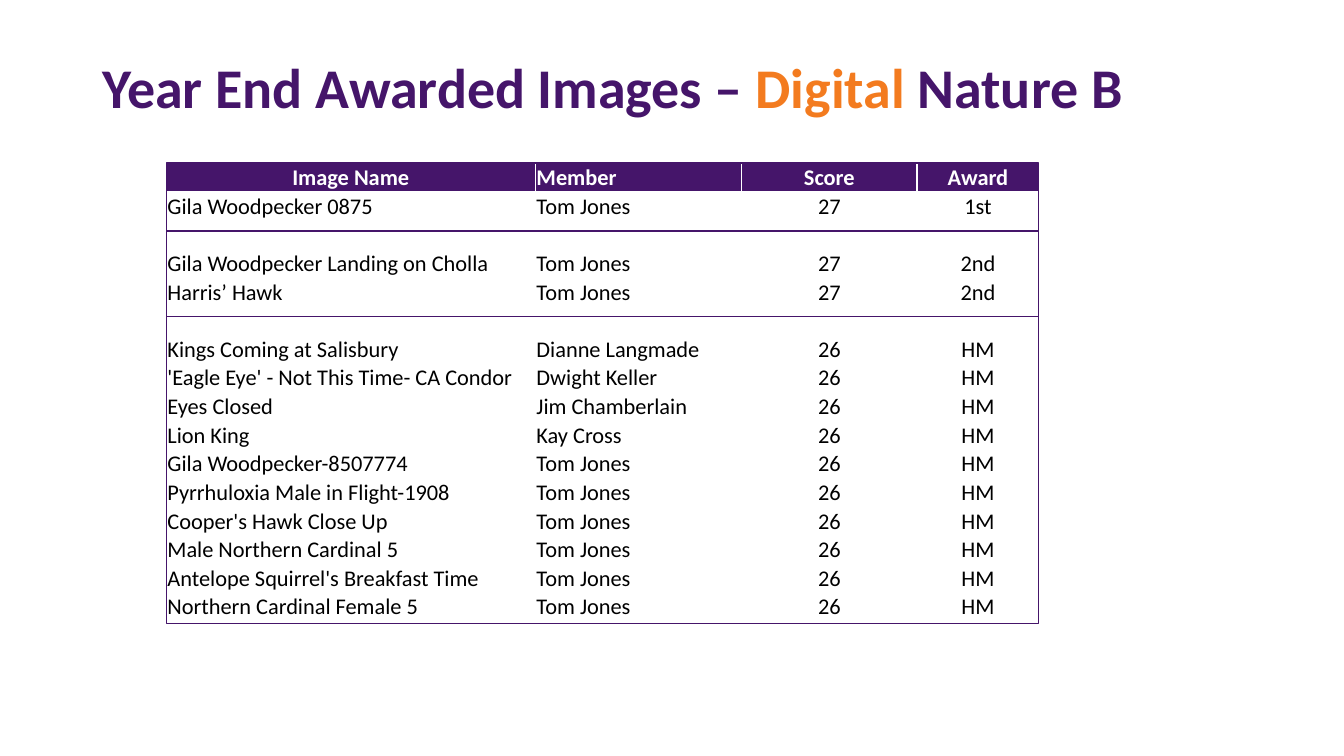
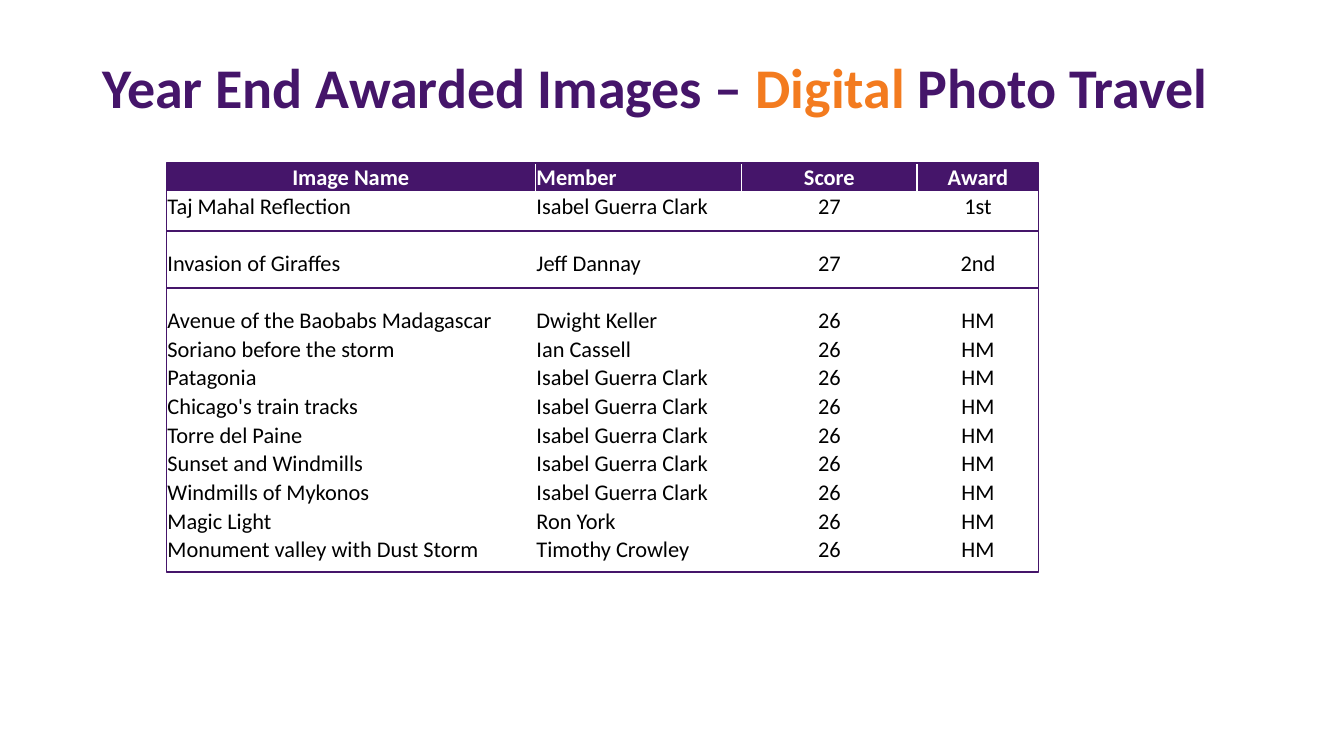
"""Build the year-end award slides for two digital photo categories."""
from dataclasses import dataclass

from lxml import etree
from pptx import Presentation
from pptx.dml.color import RGBColor
from pptx.enum.shapes import MSO_CONNECTOR, MSO_SHAPE
from pptx.enum.text import MSO_ANCHOR, MSO_AUTO_SIZE, PP_ALIGN
from pptx.oxml.ns import qn
from pptx.util import Cm, Pt

LEFT, CENTER = PP_ALIGN.LEFT, PP_ALIGN.CENTER
MIDDLE, BOTTOM = MSO_ANCHOR.MIDDLE, MSO_ANCHOR.BOTTOM
NO_AUTOFIT = MSO_AUTO_SIZE.NONE
RECTANGLE, STRAIGHT = MSO_SHAPE.RECTANGLE, MSO_CONNECTOR.STRAIGHT


@dataclass(frozen=True)
class Theme:
    font: str = "Calibri"
    purple: RGBColor = RGBColor(0x45, 0x15, 0x6A)
    orange: RGBColor = RGBColor(0xF3, 0x7B, 0x1F)
    white: RGBColor = RGBColor(0xFF, 0xFF, 0xFF)
    black: RGBColor = RGBColor(0, 0, 0)
    title_size: Pt = Pt(40)
    table_size: Pt = Pt(16)
    line_width: Pt = Pt(1)


THEME = Theme()
HEADERS = ["Image Name", "Member", "Score", "Award"]
COLUMN_WIDTHS = [9.3, 5.2, 4.42, 3.07]
ALIGNMENTS = [CENTER, LEFT, CENTER, CENTER]
TABLE_LEFT, TABLE_TOP, TABLE_WIDTH = 4.19, 4.11, sum(COLUMN_WIDTHS)
ROW_HEIGHT, DIVIDER_OFFSET = 0.72, 0.27

CATEGORIES = [
    ("Nature B", 11.61, [
        ("27", "1st", [("Gila Woodpecker 0875", "Tom Jones")]),
        ("27", "2nd", [
            ("Gila Woodpecker Landing on Cholla", "Tom Jones"),
            ("Harris’ Hawk", "Tom Jones"),
        ]),
        ("26", "HM", [
            ("Kings Coming at Salisbury", "Dianne Langmade"),
            ("'Eagle Eye' - Not This Time- CA Condor", "Dwight Keller"),
            ("Eyes Closed", "Jim Chamberlain"),
            ("Lion King", "Kay Cross"),
            ("Gila Woodpecker-8507774", "Tom Jones"),
            ("Pyrrhuloxia Male in Flight-1908", "Tom Jones"),
            ("Cooper's Hawk Close Up", "Tom Jones"),
            ("Male Northern Cardinal 5", "Tom Jones"),
            ("Antelope Squirrel's Breakfast Time", "Tom Jones"),
            ("Northern Cardinal Female 5", "Tom Jones"),
        ]),
    ]),
    ("Photo Travel", 10.31, [
        ("27", "1st", [("Taj Mahal Reflection", "Isabel Guerra Clark")]),
        ("27", "2nd", [("Invasion of Giraffes", "Jeff Dannay")]),
        ("26", "HM", [
            ("Avenue of the Baobabs Madagascar", "Dwight Keller"),
            ("Soriano before the storm", "Ian Cassell"),
            ("Patagonia", "Isabel Guerra Clark"),
            ("Chicago's train tracks", "Isabel Guerra Clark"),
            ("Torre del Paine", "Isabel Guerra Clark"),
            ("Sunset and Windmills", "Isabel Guerra Clark"),
            ("Windmills of Mykonos", "Isabel Guerra Clark"),
            ("Magic Light", "Ron York"),
            ("Monument valley with Dust Storm", "Timothy Crowley"),
        ]),
    ]),
]


def add_span(para, text, size, color, bold):
    span = para.add_run()
    span.text = text
    span.font.name = THEME.font
    span.font.size = size
    span.font.bold = bold
    span.font.color.rgb = color


def add_borders(cell):
    properties = cell._tc.get_or_add_tcPr()
    for side in ("a:lnL", "a:lnR", "a:lnT", "a:lnB"):
        border = etree.SubElement(properties, qn(side), w=str(THEME.line_width))
        fill = etree.SubElement(border, qn("a:solidFill"))
        etree.SubElement(fill, qn("a:srgbClr"), val=str(THEME.white))


deck = Presentation()
deck.slide_width, deck.slide_height = Cm(33.87), Cm(19.05)
title_only = deck.slide_layouts[5]

for category, frame_height, groups in CATEGORIES:
    page = deck.slides.add_slide(title_only)

    title = page.shapes.title
    title.left, title.top, title.width, title.height = Cm(2.33), Cm(1.01), Cm(29.21), Cm(2.51)
    title.text_frame.auto_size = NO_AUTOFIT
    title.text_frame.vertical_anchor = MIDDLE
    para = title.text_frame.paragraphs[0]
    para.alignment = LEFT
    para.line_spacing = 0.9
    for text, color in [
        ("Year End Awarded Images – ", THEME.purple),
        ("Digital", THEME.orange),
        (f" {category}", THEME.purple),
    ]:
        add_span(para, text, THEME.title_size, color, True)

    rows = [HEADERS]
    divider_rows = []
    for score, award, entries in groups:
        if len(rows) > 1:
            divider_rows.append(len(rows))
            rows.append([""] * len(HEADERS))
        rows.extend([name, member, score, award] for name, member in entries)

    table = page.shapes.add_table(
        len(rows), len(HEADERS), Cm(TABLE_LEFT), Cm(TABLE_TOP),
        Cm(TABLE_WIDTH), Cm(ROW_HEIGHT * len(rows)),
    ).table
    table.horz_banding = False
    for column, width in zip(table.columns, COLUMN_WIDTHS):
        column.width = Cm(width)
    for row_index, values in enumerate(rows):
        is_header = row_index == 0
        table.rows[row_index].height = Cm(ROW_HEIGHT)
        for column_index, text in enumerate(values):
            cell = table.cell(row_index, column_index)
            cell.margin_left = cell.margin_right = cell.margin_top = Cm(0.03)
            cell.margin_bottom = 0
            cell.vertical_anchor = BOTTOM
            add_borders(cell)
            if is_header:
                cell.fill.solid()
                cell.fill.fore_color.rgb = THEME.purple
            else:
                cell.fill.background()
            para = cell.text_frame.paragraphs[0]
            is_body_name = column_index == 0 and not is_header
            para.alignment = LEFT if is_body_name else ALIGNMENTS[column_index]
            if text:
                color = THEME.white if is_header else THEME.black
                add_span(para, text, THEME.table_size, color, is_header)
            else:
                size = str(int(THEME.table_size.pt * 100))
                etree.SubElement(para._p, qn("a:endParaRPr"), sz=size)

    frame = page.shapes.add_shape(
        RECTANGLE, Cm(TABLE_LEFT), Cm(TABLE_TOP), Cm(TABLE_WIDTH), Cm(frame_height))
    frame.shadow.inherit = False
    frame.fill.background()
    frame.line.color.rgb = THEME.purple
    frame.line.width = THEME.line_width

    for divider_row in divider_rows:
        height = Cm(TABLE_TOP + divider_row * ROW_HEIGHT + DIVIDER_OFFSET)
        divider = page.shapes.add_connector(
            STRAIGHT, Cm(TABLE_LEFT), height, Cm(TABLE_LEFT + TABLE_WIDTH), height)
        divider.line.color.rgb = THEME.purple
        divider.line.width = THEME.line_width
        etree.SubElement(divider._element.spPr, qn("a:effectLst"))

deck.save("out.pptx")
